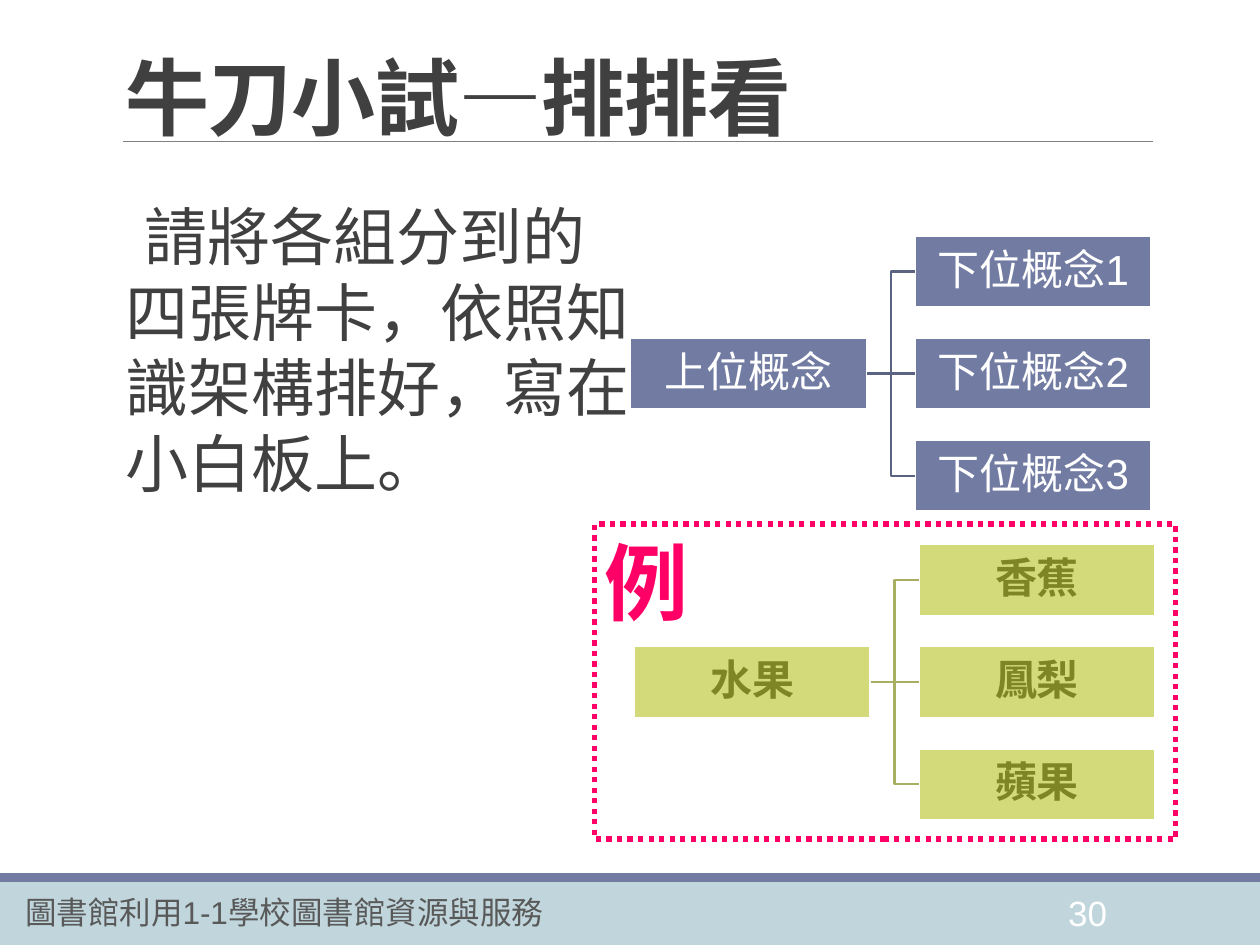
from dataclasses import dataclass

from lxml import etree
from pptx import Presentation
from pptx.dml.color import RGBColor
from pptx.enum import dml, shapes, text
from pptx.oxml import ns
from pptx.util import Inches, Pt


@dataclass(frozen=True)
class Theme:
    latin: str = "Arial"
    asian: str = "Noto Sans CJK SC"
    ink: str = "404040"
    gray: str = "595959"
    rule: str = "808080"
    white: str = "FFFFFF"
    blue: str = "727CA3"
    navy: str = "5B6383"
    pale: str = "C0D6DC"
    lime: str = "D2DA7A"
    moss: str = "A8AF62"
    olive: str = "7D8525"
    pink: str = "FF0066"
    head: int = 48
    body: int = 36
    node: int = 24
    page: int = 20
    foot: int = 18


T = Theme()
BOX_W, BOX_H = 1.88, 0.57
COL, ROW = 2.26, 0.81


def rgb(tone):
    return RGBColor.from_string(tone)


def write(shape, words, size, tone, bold=False, face=T.latin):
    frame = shape.text_frame
    frame.word_wrap = True
    frame.text = words
    para = frame.paragraphs[0]
    run = para.runs[0]
    font = run.font
    font.name, font.size, font.bold = face, Pt(size), bold
    font.color.rgb = rgb(tone)
    etree.SubElement(font._element, ns.qn("a:ea"), typeface=T.asian)
    return para


def label(slide, place, *style, **more):
    box = slide.shapes.add_textbox(*map(Inches, place))
    return box, write(box, *style, **more)


def block(slide, place, fill=None, line=None, width=1.25):
    kind = shapes.MSO_SHAPE.RECTANGLE
    rect = slide.shapes.add_shape(kind, *map(Inches, place))
    rect.shadow.inherit = False
    if fill:
        rect.fill.solid()
        rect.fill.fore_color.rgb = rgb(fill)
    else:
        rect.fill.background()
    if line:
        rect.line.color.rgb = rgb(line)
        rect.line.width = Pt(width)
    else:
        rect.line.fill.background()
    return rect


def link(slide, kind, ends, tone, width):
    line = slide.shapes.add_connector(kind, *map(Inches, ends))
    line.line.color.rgb = rgb(tone)
    line.line.width = Pt(width)
    etree.SubElement(line._element.spPr, ns.qn("a:effectLst"))
    return line


def node(slide, left, top, words, fill, tone, bold):
    rect = block(slide, (left, top, BOX_W, BOX_H), fill, T.white)
    para = write(rect, words, T.node, tone, bold)
    para.alignment = text.PP_ALIGN.CENTER
    para.line_spacing = 0.9
    frame = rect.text_frame
    frame.vertical_anchor = text.MSO_ANCHOR.MIDDLE
    frame.margin_left = frame.margin_right = Inches(0.02)
    frame.margin_top = frame.margin_bottom = Inches(0.02)
    return rect


def tree(slide, left, top, root, leaves, fill, edge, tone, bold=False):
    mid = top + ROW * (len(leaves) - 1) / 2
    trunk = node(slide, left, mid, root, fill, tone, bold)
    for i, words in enumerate(leaves):
        y = top + i * ROW
        leaf = node(slide, left + COL, y, words, fill, tone, bold)
        kind = shapes.MSO_CONNECTOR.STRAIGHT if y == mid else shapes.MSO_CONNECTOR.ELBOW
        ends = (left + BOX_W, mid + BOX_H / 2, left + COL, y + BOX_H / 2)
        line = link(slide, kind, ends, edge, 1.25)
        line.begin_connect(trunk, 3)
        line.end_connect(leaf, 1)


def footer(slide):
    block(slide, (0, 7, 10, 0.5), T.pale)
    block(slide, (0, 6.93, 10, 0.07), T.blue)
    label(slide, (8.38, 7.03, 0.7, 0.4), "30", T.page, T.white)
    label(slide, (0.1, 7.04, 4.65, 0.4), "圖書館利用1-1學校圖書館資源與服務", T.foot, T.gray)


def title(slide):
    link(slide, shapes.MSO_CONNECTOR.STRAIGHT, (0.98, 1.12, 9.15, 1.12), T.rule, 0.5)
    box, para = label(slide, (0.9, 0.4, 8.25, 0.81), "牛刀小試—排排看",
                      T.head, T.ink, bold=True, face=T.asian)
    box.text_frame.vertical_anchor = text.MSO_ANCHOR.BOTTOM
    para.line_spacing = 0.85
    para.runs[0].font._element.set("spc", "-50")


def task(slide):
    words = "請將各組分到的四張牌卡，依照知識架構排好，寫在小白板上。"
    box, para = label(slide, (0.9, 1.52, 4.1, 4.9), words, T.body, T.ink, face=T.asian)
    box.text_frame.margin_left = box.text_frame.margin_right = 0
    props = para._p.get_or_add_pPr()
    props.set("marL", str(Inches(0.1)))
    props.set("indent", str(Inches(-0.1)))
    etree.SubElement(props, ns.qn("a:buChar"), char=" ")
    para.space_after = Pt(6)


def sample(slide):
    tag = block(slide, (4.66, 4.16, 0.94, 0.83), T.white)
    para = write(tag, "例", T.head, T.pink, bold=True, face=T.asian)
    para.alignment = text.PP_ALIGN.CENTER
    tag.text_frame.vertical_anchor = text.MSO_ANCHOR.TOP
    frame = block(slide, (4.72, 4.16, 4.61, 2.5), line=T.pink, width=3)
    frame.line.dash_style = dml.MSO_LINE.ROUND_DOT


def main():
    deck = Presentation()
    deck.slide_width, deck.slide_height = Inches(10), Inches(7.5)
    slide = deck.slides.add_slide(deck.slide_layouts[6])
    footer(slide)
    title(slide)
    task(slide)
    tree(slide, 5, 1.87, "上位概念", [f"下位概念{n}" for n in (1, 2, 3)],
         T.blue, T.navy, T.white)
    tree(slide, 5.03, 4.32, "水果", ["香蕉", "鳳梨", "蘋果"],
         T.lime, T.moss, T.olive, bold=True)
    sample(slide)
    deck.save("out.pptx")


if __name__ == "__main__":
    main()
